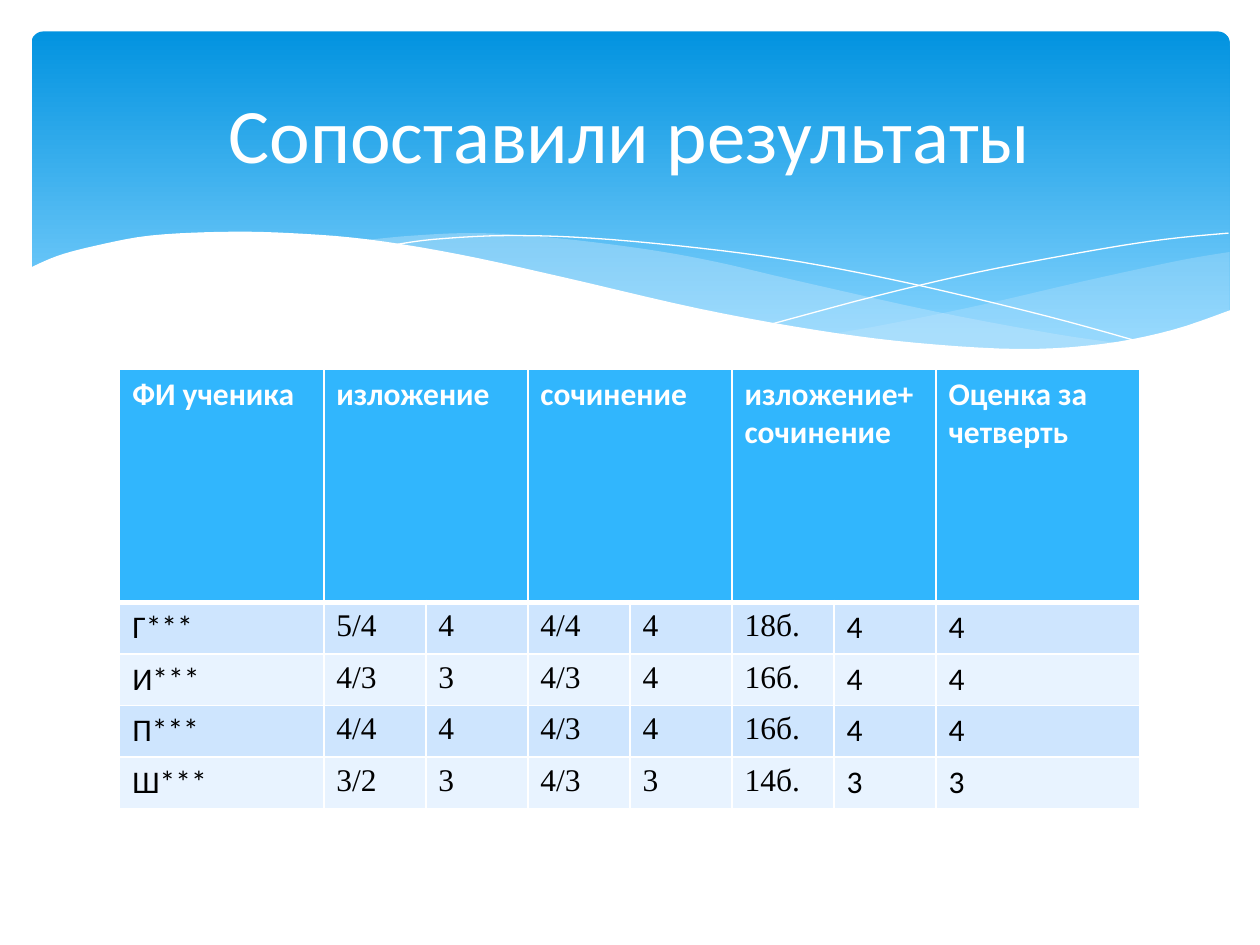
"""Build a slide with a wave banner, a title and a table comparing pupils' results."""
from lxml import etree
from pptx import Presentation
from pptx.dml.color import RGBColor
from pptx.enum.shapes import MSO_SHAPE as Shape
from pptx.enum.text import MSO_ANCHOR as Anchor, PP_ALIGN as Align
from pptx.oxml import parse_xml
from pptx.oxml.ns import nsdecls, qn
from pptx.util import Inches, Pt

color = RGBColor.from_string
presentation = Presentation()
presentation.slide_width, presentation.slide_height = Inches(10), Inches(7.5)
slide = presentation.slides.add_slide(presentation.slide_layouts[6])
UNIT = presentation.slide_width / 10


def grid(*cells):
    """Turn counts of grid columns or rows into slide lengths."""
    return [round(cell * UNIT) for cell in cells]


def smooth(knots, steps=5):
    """Run a Catmull-Rom curve through the knots of one edge."""
    padded = [knots[0], *knots, knots[-1]]
    points = [knots[0]]
    for a, b, c, d in zip(padded, padded[1:], padded[2:], padded[3:]):
        for t in [step / steps for step in range(1, steps + 1)]:
            points.append(tuple(
                q + t / 2 * (r - p + t * (2 * p - 5 * q + 4 * r - s + t * (3 * q - p - 3 * r + s)))
                for p, q, r, s in zip(a, b, c, d)))
    return points


banner = slide.shapes.add_shape(Shape.ROUNDED_RECTANGLE, *grid(0.25, 0.25, 9.51, 2.7))
banner.shadow.inherit = False
banner.adjustments[0] = 0.034
banner.line.fill.background()
banner.fill.gradient()
banner.fill.gradient_angle = 270
for stop, position, shade in zip(banner.fill.gradient_stops, (0, 0.9), ("0293E0", "83D3FE")):
    stop.position = position
    stop.color.rgb = color(shade)

waves = [
    ("C6E7FC", 29, [
        [(9.76, 2), (9.35, 2.07), (8.61, 2.23), (7.79, 2.42), (7.06, 2.57), (6.61, 2.65)],
        [(6.61, 2.65), (7.05, 2.71), (7.57, 2.76), (8.14, 2.78), (8.72, 2.74), (9.21, 2.65), (9.76, 2.47)]]),
    ("C6E7FC", 40, [
        [(8.93, 2.73), (8.37, 2.65), (7.41, 2.47), (6.29, 2.22), (5.69, 2.08), (5.14, 1.98),
         (4.42, 1.89), (3.8, 1.85), (3.28, 1.87), (2.86, 1.91)],
        [(2.86, 1.91), (3.62, 2.03), (4.49, 2.22), (5.3, 2.4), (6.01, 2.55), (6.65, 2.66),
         (7.22, 2.74), (7.73, 2.77), (8.28, 2.78), (8.93, 2.73)]]),
    (None, 100, [
        [(3.09, 1.95), (3.44, 1.9), (4.01, 1.87), (4.69, 1.89), (5.56, 1.97), (6.36, 2.08),
         (7.27, 2.26), (8.31, 2.51), (9.07, 2.72)]]),
    (None, 100, [
        [(6.13, 2.57), (6.95, 2.35), (7.76, 2.16), (8.66, 1.99), (9.24, 1.9), (9.75, 1.85)]]),
    ("FFFFFF", 100, [
        [(9.77, 2.46), (9.3, 2.62), (8.75, 2.73), (8.09, 2.77), (7.26, 2.72), (6.48, 2.62),
         (5.55, 2.45), (4.47, 2.2), (3.65, 2.02), (2.92, 1.9), (2.3, 1.85), (1.77, 1.84),
         (1.19, 1.87), (0.76, 1.95), (0.46, 2.03), (0.23, 2.13)],
        [(0.23, 3.29), (9.77, 3.29)]]),
]
for fill, opacity, edges in waves:
    points = [grid(*point) for edge in edges for point in smooth(edge)]
    builder = slide.shapes.build_freeform(*points[0], scale=1.0)
    builder.add_line_segments(points[1:], close=fill is not None)
    wave = builder.convert_to_shape()
    wave.shadow.inherit = False
    if fill is None:
        wave.fill.background()
        wave.line.color.rgb = color("FFFFFF")
        wave.line.width = Pt(0)
    else:
        wave.line.fill.background()
        wave.fill.solid()
        wave.fill.fore_color.rgb = color(fill)
        shade = wave.fill._xPr.find(".//" + qn("a:srgbClr"))
        etree.SubElement(shade, qn("a:alpha"), val=str(opacity * 1000))

headers = ["ФИ ученика", "изложение", "", "сочинение", "", "изложение+сочинение", "", "Оценка за четверть"]
results = [
    ["Г***", "5/4", "4", "4/4", "4", "18б.", "4", "4"],
    ["И***", "4/3", "3", "4/3", "4", "16б.", "4", "4"],
    ["П***", "4/4", "4", "4/3", "4", "16б.", "4", "4"],
    ["Ш***", "3/2", "3", "4/3", "3", "14б.", "3", "3"],
]
rows = [headers, *results]
table = slide.shapes.add_table(len(rows), len(headers), *grid(0.95, 2.93, 8.1, 3.47)).table
table.first_row = table.horz_banding = False
for index, column in enumerate(table.columns):
    column.width = grid(1.62 if index in (0, 7) else 0.81)[0]
for index, row in enumerate(table.rows):
    row.height = grid(0.41 if index else 1.85)[0]
for left in (1, 3, 5):
    table.cell(0, left).merge(table.cell(0, left + 1))

for y, values in enumerate(rows):
    for x, value in enumerate(values):
        cell = table.cell(y, x)
        cell.fill.solid()
        cell.fill.fore_color.rgb = color(("E8F3FF", "CEE5FE")[y % 2] if y else "31B6FD")
        thick = {(0, "B"), (1, "T")}
        for place, side in enumerate("LRTB"):
            width = Pt(3 if (y, side) in thick else 1)
            cell._tc.get_or_add_tcPr().insert(place, parse_xml(
                f'<a:ln{side} {nsdecls("a")} w="{width}"><a:solidFill>'
                f'<a:srgbClr val="FFFFFF"/></a:solidFill></a:ln{side}>'))
        if value:
            run = cell.text_frame.paragraphs[0].add_run()
            run.text = value
            run.font.size = Pt(18)
            run.font.bold = y == 0
            run.font.name = "Times New Roman" if y and 1 <= x <= 5 else "Calibri"
            run.font.color.rgb = color("000000" if y else "FFFFFF")

title = slide.shapes.add_textbox(*grid(0.5, 0.37, 9, 1.37)).text_frame
title.word_wrap = True
title.vertical_anchor = Anchor.MIDDLE
paragraph = title.paragraphs[0]
paragraph.alignment = Align.CENTER
run = paragraph.add_run()
run.text = "Сопоставили результаты"
run.font.size = Pt(44)
run.font.name = "Calibri"
run.font.color.rgb = color("FFFFFF")

presentation.save("out.pptx")
